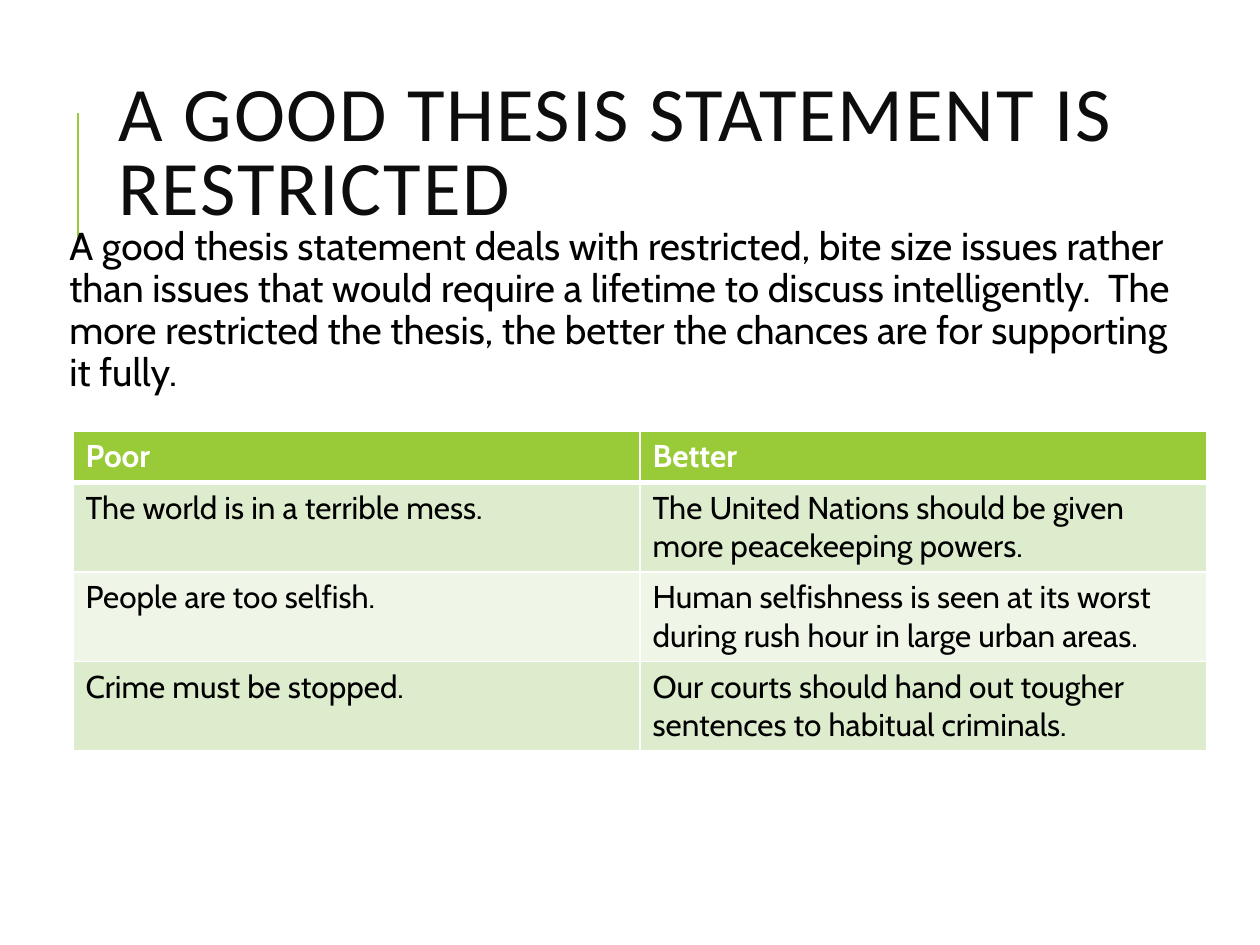
from lxml.etree import SubElement as Sub
from pptx import Presentation as Deck
from pptx.dml.color import RGBColor as Color
from pptx.enum.shapes import MSO_CONNECTOR as Link
from pptx.enum.text import MSO_ANCHOR as Anchor, MSO_AUTO_SIZE as Auto, PP_ALIGN as Align
from pptx.oxml.ns import qn
from pptx.util import Inches, Pt

GREEN = Color(0x99, 0xCB, 0x38)
PALE = Color(0xDE, 0xEC, 0xCE)
MIST = Color(0xEF, 0xF6, 0xE8)
WHITE = Color(0xFF, 0xFF, 0xFF)
BLACK = Color(0, 0, 0)
INK = Color(0x0D, 0x0D, 0x0D)

ROWS = [
    ("Poor", "Better"),
    ("The world is in a terrible mess.",
     "The United Nations should be given more peacekeeping powers."),
    ("People are too selfish.",
     "Human selfishness is seen at its worst during rush hour in large urban areas."),
    ("Crime must be stopped.",
     "Our courts should hand out tougher sentences to habitual criminals."),
]


def apply(item, form):
    for name, value in form.items():
        setattr(item, name, value)


def place(item, box):
    names = ("left", "top", "width", "height")
    apply(item, dict(zip(names, map(Inches, box))))


def write(frame, text, font, color, para):
    frame.text = text
    line = frame.paragraphs[0]
    apply(line, para)
    run = line.runs[0]
    apply(run.font, font)
    run.font.color.rgb = color
    return run


def add_title(slide, box):
    left, top = box[:2]
    title = slide.shapes.title
    place(title, box)
    frame = title.text_frame
    apply(frame, dict(auto_size=Auto.NONE, word_wrap=True, vertical_anchor=Anchor.MIDDLE))
    run = write(frame, "A GOOD THESIS STATEMENT IS RESTRICTED",
                dict(name="Calibri", size=Pt(44)), INK,
                dict(alignment=Align.LEFT, line_spacing=0.8))
    run.font._element.set("spc", "100")

    x = Inches(left - 0.22)
    rule = slide.shapes.add_connector(
        Link.STRAIGHT, x, Inches(top + 1.48), x, Inches(top + 0.48))
    rule.line.color.rgb = GREEN
    rule.line.width = Pt(1.5)
    Sub(rule._element.spPr, qn("a:effectLst"))
    title._element.addprevious(rule._element)


def add_body(slide, box):
    body = slide.placeholders[1]
    place(body, box)
    frame = body.text_frame
    apply(frame, dict(auto_size=Auto.NONE, word_wrap=True, vertical_anchor=Anchor.TOP))
    apply(frame, {"margin_" + side: Inches(0.05)
                  for side in ("left", "top", "right", "bottom")})
    write(frame, "A good thesis statement deals with restricted, bite size issues "
          "rather than issues that would require a lifetime to discuss "
          "intelligently.  The more restricted the thesis, the better the "
          "chances are for supporting it fully.",
          dict(name="Cabin", size=Pt(22.2)), BLACK,
          dict(alignment=Align.LEFT, line_spacing=0.9,
               space_before=Pt(12), space_after=Pt(2)))
    props = frame.paragraphs[0]._p.get_or_add_pPr()
    apply(props, dict(marL=0, indent=0)) if hasattr(props, "marL") else None
    props.set("marL", "0")
    props.set("indent", "0")
    Sub(props, qn("a:buNone"))


def edge(cell, sides):
    props = cell._tc.get_or_add_tcPr()
    for side, width in sides.items():
        line = Sub(props, qn("a:ln" + side), w=str(Pt(width)))
        fill = Sub(line, qn("a:solidFill"))
        Sub(fill, qn("a:srgbClr"), val=str(WHITE))


def add_grid(slide, box):
    size = len(ROWS), len(ROWS[0])
    grid = slide.shapes.add_table(*size, *map(Inches, box)).table
    for r, texts in enumerate(ROWS):
        head = r == 0
        grid.rows[r].height = Inches(0.41 if head else 0.7)
        for c, text in enumerate(texts):
            cell = grid.cell(r, c)
            write(cell.text_frame, text,
                  dict(name="Cabin", size=Pt(18), bold=head),
                  WHITE if head else BLACK, dict(alignment=Align.LEFT))
            edge(cell, dict(L=1, R=1, T=3 if r == 1 else 1, B=3 if head else 1))
            cell.fill.solid()
            cell.fill.fore_color.rgb = GREEN if head else PALE if r % 2 else MIST


def main():
    deck = Deck()
    apply(deck, dict(slide_width=Inches(10), slide_height=Inches(7.5)))
    slide = deck.slides.add_slide(deck.slide_layouts[1])
    add_title(slide, (0.84, 0.42, 8.66, 1.64))
    add_grid(slide, (0.58, 3.42, 9, 2.51))
    add_body(slide, (0.5, 1.75, 9, 1.33))
    deck.save("out.pptx")


if __name__ == "__main__":
    main()
